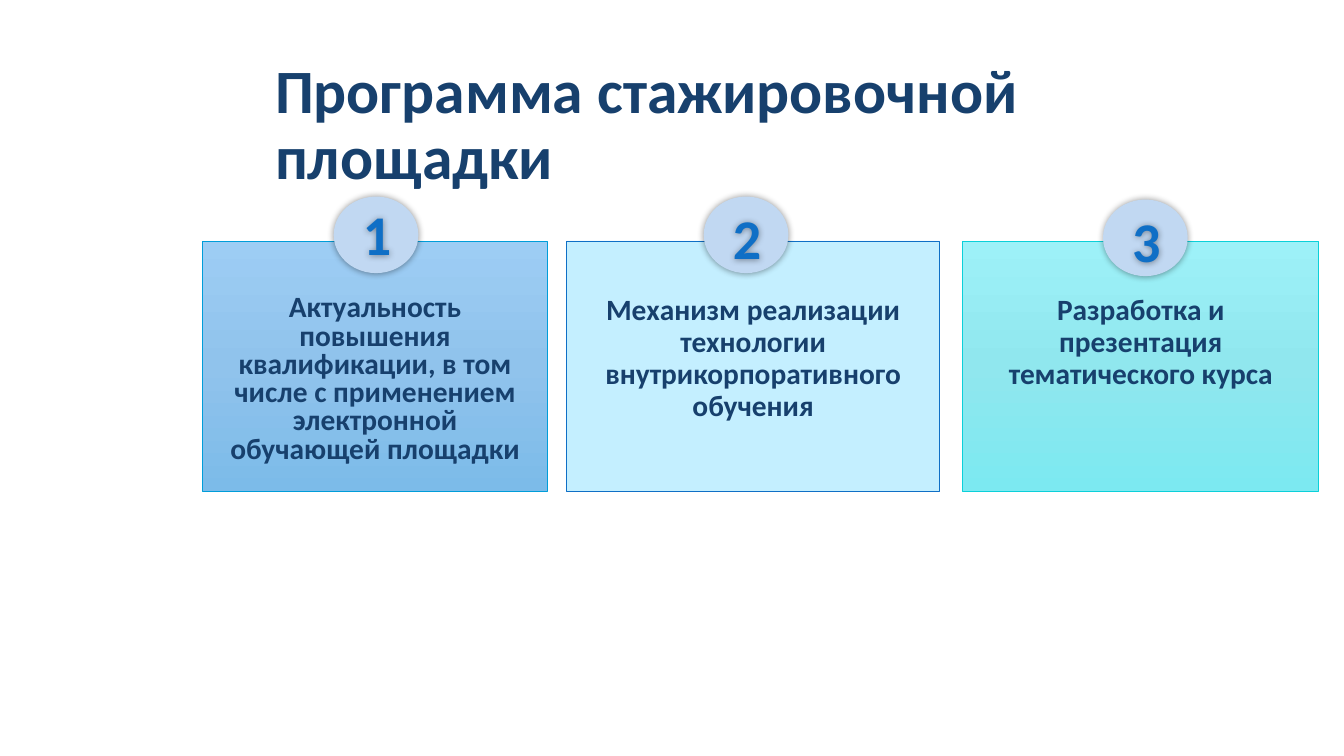
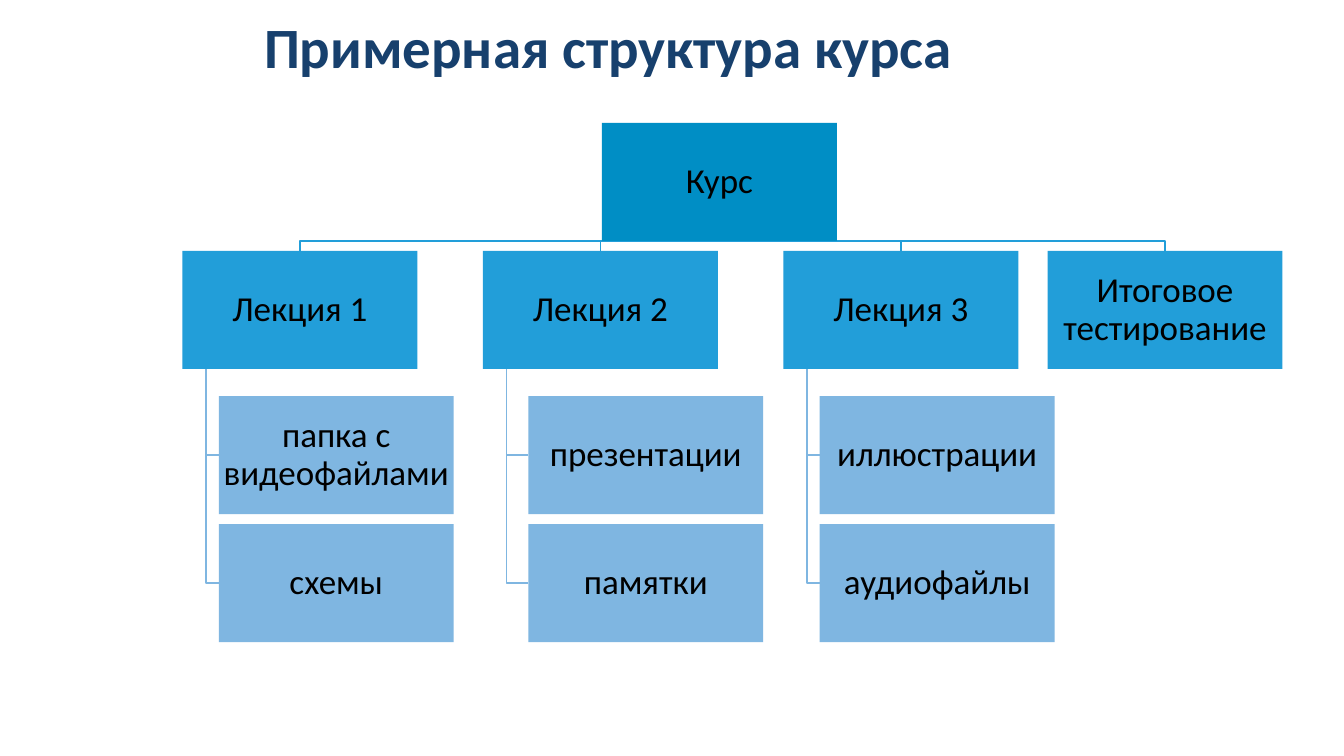
from copy import deepcopy

from lxml.etree import SubElement
from pptx import Presentation
from pptx.dml.color import RGBColor
from pptx.enum.shapes import MSO_SHAPE
from pptx.enum.text import MSO_ANCHOR, PP_ALIGN
from pptx.oxml.ns import qn
from pptx.util import Inches, Pt

# Shared style
FONT = "Calibri"
NAVY = RGBColor(0x17, 0x40, 0x6D)
BLUE = RGBColor(0x0F, 0x6F, 0xC6)
BLACK = RGBColor(0x00, 0x00, 0x00)
BADGE = RGBColor(0xC1, 0xD8, 0xF2)
ICE = RGBColor(0xC4, 0xEF, 0xFF)
SKY_LINE = RGBColor(0x00, 0x9D, 0xD9)
AQUA_LINE = RGBColor(0x0B, 0xD0, 0xD9)
SKY_STOPS = (RGBColor(0x9D, 0xCD, 0xF4), RGBColor(0x90, 0xC3, 0xEC), RGBColor(0x7C, 0xBB, 0xE9))
AQUA_STOPS = (RGBColor(0x9D, 0xF1, 0xF8), RGBColor(0x90, 0xE7, 0xEE), RGBColor(0x7C, 0xE9, 0xF1))
ROOT = RGBColor(0x00, 0x8E, 0xC5)
BRANCH = RGBColor(0x22, 0x9E, 0xD9)
LEAF = RGBColor(0x7F, 0xB6, 0xE1)

# Slide 1: cards as (left, width, fills, line, text, line spacing, badge left, badge top, number top)
PROGRAM_TITLE = "Программа стажировочной площадки"
CARDS = [
    (2.01, 3.42, SKY_STOPS, SKY_LINE,
     "Актуальность повышения квалификации, в том числе с применением "
     "электронной обучающей площадки", 0.8, 3.31, 1.95, 1.93),
    (5.62, 3.7, (ICE,), BLUE,
     "Механизм реализации технологии внутрикорпоративного обучения",
     0.9, 6.98, 1.95, 1.97),
    (9.55, 3.53, AQUA_STOPS, AQUA_LINE,
     "Разработка и презентация тематического курса", 0.9, 10.94, 1.98, 2.0),
]
CARD_TOP, CARD_HEIGHT = 2.39, 2.48
BADGE_WIDTH, BADGE_HEIGHT = 0.84, 0.76

# Slide 2: branches as (left, name, left of leaves, leaves)
STRUCTURE_TITLE = "Примерная структура курса"
COURSE = "Курс"
BRANCHES = [
    (1.81, "Лекция 1", 2.17, ["папка с видеофайлами", "схемы"]),
    (4.79, "Лекция 2", 5.24, ["презентации", "памятки"]),
    (7.77, "Лекция 3", 8.13, ["иллюстрации", "аудиофайлы"]),
    (10.39, "Итоговое тестирование", None, []),
]
NODE_WIDTH, NODE_HEIGHT, ROW_GAP = 2.33, 1.17, 0.1
ROOT_LEFT, ROOT_TOP = 5.97, 1.22
BRANCH_TOP = ROOT_TOP + NODE_HEIGHT + ROW_GAP
LEAF_TOP = 3.93


def write(shape, text, size, color, bold=False, spacing=1.0,
          align=PP_ALIGN.CENTER, anchor=MSO_ANCHOR.MIDDLE, margins=(0.1, 0.05)):
    frame = shape.text_frame
    frame.word_wrap = True
    frame.vertical_anchor = anchor
    side, top = margins
    frame.margin_left = frame.margin_right = Inches(side)
    frame.margin_top, frame.margin_bottom = Inches(top), Inches(min(top, 0.05))
    paragraph = frame.paragraphs[0]
    paragraph.alignment = align
    paragraph.line_spacing = spacing
    run = paragraph.add_run()
    run.text = text
    run.font.name, run.font.size, run.font.bold = FONT, Pt(size), bold
    run.font.color.rgb = color


def add_text_box(slide, left, top, width, height):
    return slide.shapes.add_textbox(*map(Inches, (left, top, width, height)))


def add_title(slide, text, box, size, spacing):
    write(add_text_box(slide, *box), text, size, NAVY, True, spacing, PP_ALIGN.LEFT)


def add_block(slide, box, fills, line=None, kind=MSO_SHAPE.RECTANGLE):
    shape = slide.shapes.add_shape(kind, *map(Inches, box))
    shape.shadow.inherit = False
    if len(fills) == 1:
        shape.fill.solid()
        shape.fill.fore_color.rgb = fills[0]
    else:
        shape.fill.gradient()
        shape.fill.gradient_angle = 270
        stop_list = shape._element.spPr.find(".//" + qn("a:gsLst"))
        stop_list.insert(1, deepcopy(stop_list[0]))
        for index, (stop, color) in enumerate(zip(shape.fill.gradient_stops, fills)):
            stop.position = index / (len(fills) - 1)
            stop.color.rgb = color
    if line is None:
        shape.line.fill.background()
    else:
        shape.line.color.rgb = line
        shape.line.width = Pt(0.5)
    return shape


def add_glow(shape):
    """Soft black shadow directly behind the shape."""
    shape.shadow.inherit = False
    effects = shape._element.spPr.find(qn("a:effectLst"))
    shadow = SubElement(effects, qn("a:outerShdw"), blurRad=str(Pt(5)), dist="0", dir="0")
    color = SubElement(shadow, qn("a:srgbClr"), val="000000")
    SubElement(color, qn("a:alpha"), val="40000")


def add_path(slide, points, color):
    start, *others = [(Inches(x), Inches(y)) for x, y in points]
    builder = slide.shapes.build_freeform(*start)
    builder.add_line_segments(others, close=False)
    shape = builder.convert_to_shape()
    shape.shadow.inherit = False
    shape.fill.background()
    shape.line.color.rgb = color
    shape.line.width = Pt(1)


def add_node(slide, left, top, text, fill):
    shape = add_block(slide, (left, top, NODE_WIDTH, NODE_HEIGHT), (fill,))
    write(shape, text, 25, BLACK, spacing=0.9, margins=(0.02, 0.02))


def build_program(slide):
    add_title(slide, PROGRAM_TITLE, (2.63, 0.53, 10.32, 1.45), 44, 0.9)
    for number, card in enumerate(CARDS, 1):
        left, width, fills, line, text, spacing, badge_left, badge_top, number_top = card
        block = add_block(slide, (left, CARD_TOP, width, CARD_HEIGHT), fills, line)
        write(block, text, 21, NAVY, True, spacing,
              anchor=MSO_ANCHOR.TOP, margins=(0.12, 0.54))
        # Numbered badge on the card's top edge
        badge = add_block(slide, (badge_left, badge_top, BADGE_WIDTH, BADGE_HEIGHT),
                          (BADGE,), kind=MSO_SHAPE.OVAL)
        add_glow(badge)
        label = add_text_box(slide, badge_left + 0.01, number_top, BADGE_WIDTH, 0.77)
        add_glow(label)
        write(label, str(number), 40, BLUE, True, anchor=MSO_ANCHOR.TOP)


def build_structure(slide):
    add_title(slide, STRUCTURE_TITLE, (2.52, 0.17, 10.32, 0.7), 40.7, 0.8)
    root_middle, root_bottom = ROOT_LEFT + NODE_WIDTH / 2, ROOT_TOP + NODE_HEIGHT
    leaf_tops = [LEAF_TOP + row * (NODE_HEIGHT + ROW_GAP) for row in range(2)]
    # Connecting lines lie behind the nodes
    for left, _, leaf_left, leaves in BRANCHES:
        middle, stem = left + NODE_WIDTH / 2, left + NODE_WIDTH / 10
        add_path(slide, [(root_middle, root_bottom), (middle, root_bottom),
                         (middle, BRANCH_TOP)], BRANCH)
        for top, _ in zip(leaf_tops, leaves):
            leaf_middle = top + NODE_HEIGHT / 2
            add_path(slide, [(stem, BRANCH_TOP + NODE_HEIGHT), (stem, leaf_middle),
                             (leaf_left, leaf_middle)], LEAF)
    # Nodes
    add_node(slide, ROOT_LEFT, ROOT_TOP, COURSE, ROOT)
    for left, name, leaf_left, leaves in BRANCHES:
        add_node(slide, left, BRANCH_TOP, name, BRANCH)
        for top, leaf in zip(leaf_tops, leaves):
            add_node(slide, leaf_left, top, leaf, LEAF)


def main():
    presentation = Presentation()
    presentation.slide_width, presentation.slide_height = Inches(13.33), Inches(7.5)
    for build in (build_program, build_structure):
        build(presentation.slides.add_slide(presentation.slide_layouts[6]))
    presentation.save("out.pptx")


if __name__ == "__main__":
    main()
